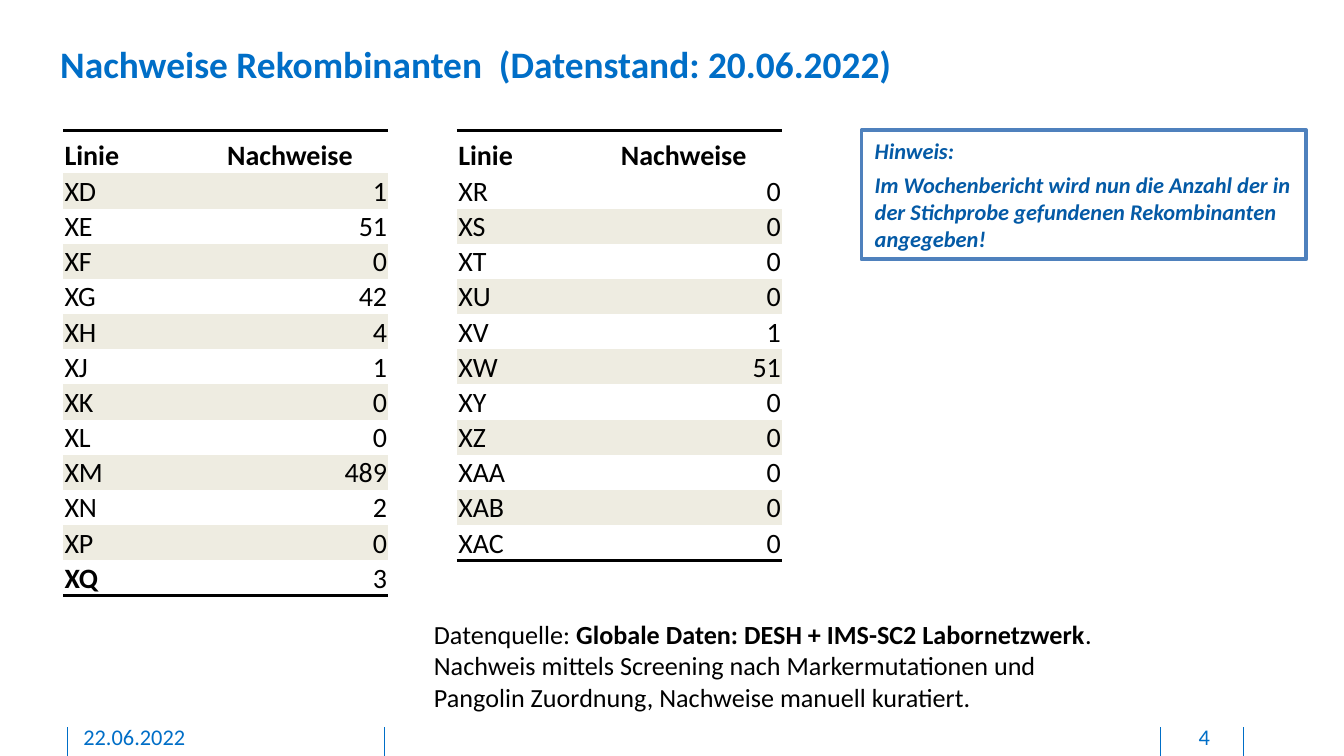
from dataclasses import dataclass

from lxml import etree
from pptx import Presentation
from pptx.dml.color import RGBColor
from pptx.enum.shapes import MSO_CONNECTOR, MSO_SHAPE
from pptx.enum.text import MSO_ANCHOR, PP_ALIGN
from pptx.oxml import parse_xml
from pptx.oxml.ns import nsdecls, qn
from pptx.util import Inches, Pt

LEFT, MID, RIGHT = PP_ALIGN.LEFT, PP_ALIGN.CENTER, PP_ALIGN.RIGHT
TOP, LOW = MSO_ANCHOR.TOP, MSO_ANCHOR.BOTTOM
RECT, LINE = MSO_SHAPE.RECTANGLE, MSO_CONNECTOR.STRAIGHT
PLAIN = "{2D5ABB26-0587-4C30-8999-92F81FD0307C}"  # table style without grid

# Square grid: 100 columns across the slide
COLS, ROWS = 100, 56.25
UNIT = Inches(10) / COLS


@dataclass(frozen=True)
class Theme:
    face: str = "Calibri"
    blue: str = "006EC7"
    navy: str = "045AA6"
    frame: str = "4F81BD"
    ink: str = "000000"
    paper: str = "FFFFFF"
    band: str = "EEECE1"
    head: int = 20
    cell: int = 15
    text: int = 14
    small: int = 12
    rule: float = 2
    hair: float = 0.5


T = Theme()

FIRST = [("XD", 1), ("XE", 51), ("XF", 0), ("XG", 42), ("XH", 4), ("XJ", 1),
         ("XK", 0), ("XL", 0), ("XM", 489), ("XN", 2), ("XP", 0), ("XQ", 3)]
SECOND = [("XR", 0), ("XS", 0), ("XT", 0), ("XU", 0), ("XV", 1), ("XW", 51),
          ("XY", 0), ("XZ", 0), ("XAA", 0), ("XAB", 0), ("XAC", 0)]


def grid(*vals):
    return [round(v * UNIT) for v in vals]


def style(para, size, color, bold=None, italic=None, align=LEFT):
    para.alignment = align
    font = para.font
    font.name, font.size = T.face, Pt(size)
    font.bold, font.italic = bold, italic
    font.color.rgb = RGBColor.from_string(color)


def label(slide, box, text, size, color, bold=None, align=LEFT):
    frame = slide.shapes.add_textbox(*grid(*box)).text_frame
    frame.word_wrap = True
    frame.vertical_anchor = TOP
    frame.text = text
    for para in frame.paragraphs:
        style(para, size, color, bold, align=align)
    return frame


def edge(cell, side):
    """Draw a rule on one side of a cell: T or B."""
    cell._tc.get_or_add_tcPr().insert(0, parse_xml(
        f'<a:ln{side} {nsdecls("a")} w="{Pt(T.rule)}"><a:solidFill>'
        f'<a:srgbClr val="{T.ink}"/></a:solidFill></a:ln{side}>'))


def counts(slide, box, data, shade, strong=()):
    """Table of lines and counts; rows with index % 2 == shade are banded."""
    left, top, width, first, step = box
    rows = [("Linie", "Nachweise")] + data
    high = first + step * len(data)
    table = slide.shapes.add_table(
        len(rows), 2, *grid(left, top, width, high)).table
    table._tbl.tblPr.find(qn("a:tableStyleId")).text = PLAIN
    table.first_row = table.horz_banding = False
    for i, row in enumerate(rows):
        table.rows[i].height = grid(step if i else first)[0]
        for j, value in enumerate(row):
            cell = table.cell(i, j)
            cell.margin_left = cell.margin_right = cell.margin_top = Inches(0.01)
            cell.margin_bottom = 0
            cell.vertical_anchor = LOW
            cell.text = str(value)
            style(cell.text_frame.paragraphs[0], T.cell, T.ink,
                  bold=i == 0 or value in strong,
                  align=RIGHT if i and j else LEFT)
            cell.fill.solid()
            fill = T.band if i and i % 2 == shade else T.paper
            cell.fill.fore_color.rgb = RGBColor.from_string(fill)
            if i == 0:
                edge(cell, "T")
            if i == len(data):
                edge(cell, "B")


def note(slide, box):
    """Framed hint."""
    shape = slide.shapes.add_shape(RECT, *grid(*box))
    shape.shadow.inherit = False
    shape.fill.solid()
    shape.fill.fore_color.rgb = RGBColor.from_string(T.paper)
    shape.line.color.rgb = RGBColor.from_string(T.frame)
    shape.line.width = Pt(T.rule)
    frame = shape.text_frame
    frame.word_wrap = True
    frame.vertical_anchor = TOP
    frame.text = ("Hinweis:\nIm Wochenbericht wird nun die Anzahl der in der "
                  "Stichprobe gefundenen Rekombinanten angegeben!")
    for para in frame.paragraphs:
        style(para, T.small, T.navy, bold=True, italic=True)
        para.space_after = Pt(4)


def source(slide, box):
    """Data source, with the network's name in bold."""
    frame = label(slide, box, "\nNachweis mittels Screening nach "
                  "Markermutationen und\nPangolin Zuordnung, Nachweise "
                  "manuell kuratiert.", T.text, T.ink)
    lead = frame.paragraphs[0]
    for text, bold in (("Datenquelle: ", False),
                       ("Globale Daten: DESH + IMS-SC2 Labornetzwerk", True),
                       (".", False)):
        run = lead.add_run()
        run.text, run.font.bold = text, bold


def footer(slide, box):
    """Date and page number between upright hairlines."""
    left, top, width, high = box
    for share in (0, 0.27, 0.93, 1):
        x = left + share * width
        line = slide.shapes.add_connector(
            LINE, *grid(x, top, x, top + high))
        line.line.color.rgb = RGBColor.from_string(T.blue)
        line.line.width = Pt(T.hair)
        etree.SubElement(line._element.spPr, qn("a:effectLst"))
    for x, wide, text, align in ((1.2, 20.3, "22.06.2022", LEFT),
                                 (81.9, 5.4, "4", MID)):
        frame = label(slide, (left + x, top - 0.3, wide, high),
                      text, T.small, T.blue, align=align)
        frame.margin_left = frame.margin_right = frame.margin_top = 0


def main():
    deck = Presentation()
    deck.slide_width, deck.slide_height = grid(COLS, ROWS)
    slide = deck.slides.add_slide(deck.slide_layouts[6])
    footer(slide, (5, 54.1, 87.5, ROWS - 54.1))
    label(slide, (3.5, 2.6, 77.4, 7.4),
          "Nachweise Rekombinanten  (Datenstand: 20.06.2022)",
          T.head, T.blue, bold=True)
    counts(slide, (4.7, 9.7, 24.2, 3.2, 2.62), FIRST, 1, strong=("XQ",))
    counts(slide, (34, 9.7, 24.2, 3.2, 2.62), SECOND, 0)
    note(slide, (64.1, 9.7, 33.1, 9.6))
    source(slide, (31.3, 45.5, 51.2, 8.1))
    deck.save("out.pptx")


if __name__ == "__main__":
    main()
